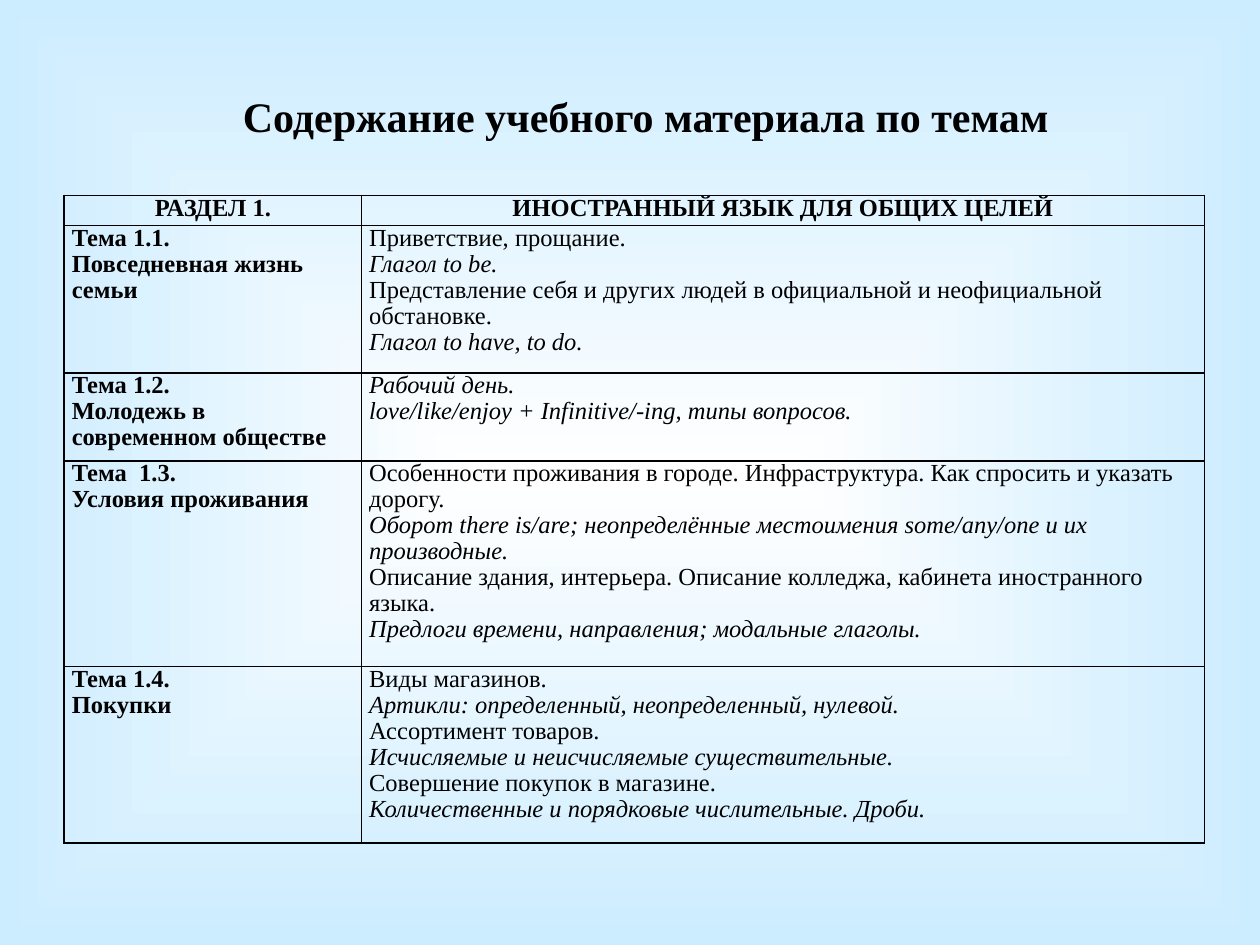
from pptx import Presentation
from pptx.dml.color import RGBColor
from pptx.enum.text import PP_ALIGN
from pptx.oxml import parse_xml
from pptx.oxml.ns import nsdecls, qn
from pptx.util import Inches, Pt

CENTER, LEFT = PP_ALIGN.CENTER, PP_ALIGN.LEFT
FONT = "Times New Roman"
BLACK = "000000"
BACKGROUND = ["FFFFFF", "CCECFF"]  # centre, edge

TITLE = "Содержание учебного материала по темам"
HEADER = ["РАЗДЕЛ 1.", "ИНОСТРАННЫЙ ЯЗЫК ДЛЯ ОБЩИХ ЦЕЛЕЙ"]
# Each topic: heading lines, then (text, italic) lines
TOPICS = [
    (["Тема 1.1.", "Повседневная жизнь семьи"], [
        ("Приветствие, прощание.", False),
        ("Глагол to be.", True),
        ("Представление себя и других людей в официальной и неофициальной обстановке.", False),
        ("Глагол to have, to do.", True),
    ]),
    (["Тема 1.2.", "Молодежь в современном обществе"], [
        ("Рабочий день.", True),
        ("love/like/enjoy + Infinitive/-ing, типы вопросов.", True),
    ]),
    (["Тема  1.3.", "Условия проживания"], [
        ("Особенности проживания в городе. Инфраструктура. Как спросить и указать дорогу.", False),
        ("Оборот there is/are; неопределённые местоимения some/any/one и их производные.", True),
        ("Описание здания, интерьера. Описание колледжа, кабинета иностранного языка.", False),
        ("Предлоги времени, направления; модальные глаголы.", True),
    ]),
    (["Тема 1.4.", "Покупки"], [
        ("Виды магазинов.", False),
        ("Артикли: определенный, неопределенный, нулевой.", True),
        ("Ассортимент товаров.", False),
        ("Исчисляемые и неисчисляемые существительные.", True),
        ("Совершение покупок в магазине.", False),
        ("Количественные и порядковые числительные. Дроби.", True),
    ]),
]
COLUMN_WIDTHS = [2.36, 6.69]
ROW_HEIGHTS = [0.24, 1.17, 0.7, 1.63, 1.4]


def color(value):
    return RGBColor.from_string(value)


def write_line(paragraph, text, size, bold=False, italic=False, alignment=LEFT):
    paragraph.text = text
    paragraph.alignment = alignment
    font = paragraph.font
    font.name, font.size = FONT, Pt(size)
    font.bold, font.italic = bold, italic
    font.color.rgb = color(BLACK)


def add_borders(cell):
    properties = cell._tc.get_or_add_tcPr()
    for position, side in enumerate(("lnL", "lnR", "lnT", "lnB")):
        properties.insert(position, parse_xml(
            f'<a:{side} {nsdecls("a")} w="{Pt(1)}"><a:solidFill>'
            f'<a:srgbClr val="{BLACK}"/></a:solidFill></a:{side}>'))


def fill_cell(cell, lines, bold=False, alignment=LEFT):
    cell.margin_left = cell.margin_right = Inches(0.06)
    cell.margin_top = cell.margin_bottom = 0
    cell.fill.background()
    add_borders(cell)
    frame = cell.text_frame
    for index, (text, italic) in enumerate(lines):
        paragraph = frame.add_paragraph() if index else frame.paragraphs[0]
        write_line(paragraph, text, 14, bold, italic, alignment)
        paragraph.line_spacing = 0.96


presentation = Presentation()
presentation.slide_width, presentation.slide_height = Inches(10), Inches(7.5)
slide = presentation.slides.add_slide(presentation.slide_layouts[6])

# Background gradient from the centre outwards
fill = slide.background.fill
fill.gradient()
for stop, value, position in zip(fill.gradient_stops, BACKGROUND, (0, 1)):
    stop.color.rgb = color(value)
    stop.position = position
gradient = slide.element.find(".//" + qn("a:gradFill"))
gradient.replace(gradient.find(qn("a:lin")), parse_xml(
    f'<a:path {nsdecls("a")} path="shape">'
    '<a:fillToRect l="50000" t="50000" r="50000" b="50000"/></a:path>'))

# Table of topics
table = slide.shapes.add_table(
    len(ROW_HEIGHTS), len(COLUMN_WIDTHS), Inches(0.51), Inches(1.55),
    Inches(sum(COLUMN_WIDTHS)), Inches(sum(ROW_HEIGHTS))).table
table.first_row = table.horz_banding = False
for column, width in zip(table.columns, COLUMN_WIDTHS):
    column.width = Inches(width)
for row, height in zip(table.rows, ROW_HEIGHTS):
    row.height = Inches(height)
for column, text in enumerate(HEADER):
    fill_cell(table.cell(0, column), [(text, False)], True, CENTER)
for row, (heading, content) in enumerate(TOPICS, start=1):
    fill_cell(table.cell(row, 0), [(text, False) for text in heading], True)
    fill_cell(table.cell(row, 1), content)

# Title
title = slide.shapes.add_textbox(Inches(1.82), Inches(0.67), Inches(6.61), Inches(0.5))
title.text_frame.word_wrap = True
write_line(title.text_frame.paragraphs[0], TITLE, 24, bold=True, alignment=CENTER)

presentation.save("out.pptx")
